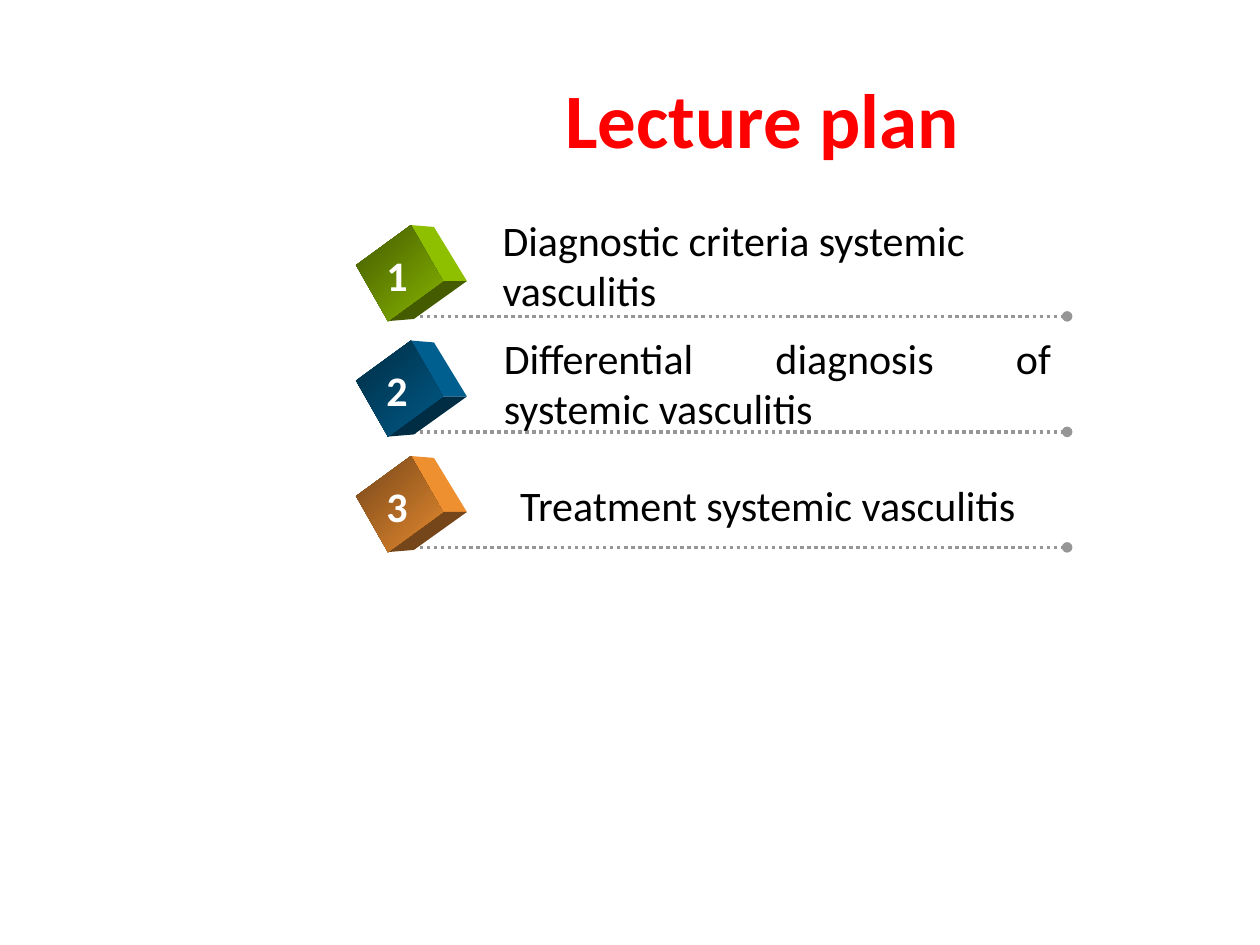
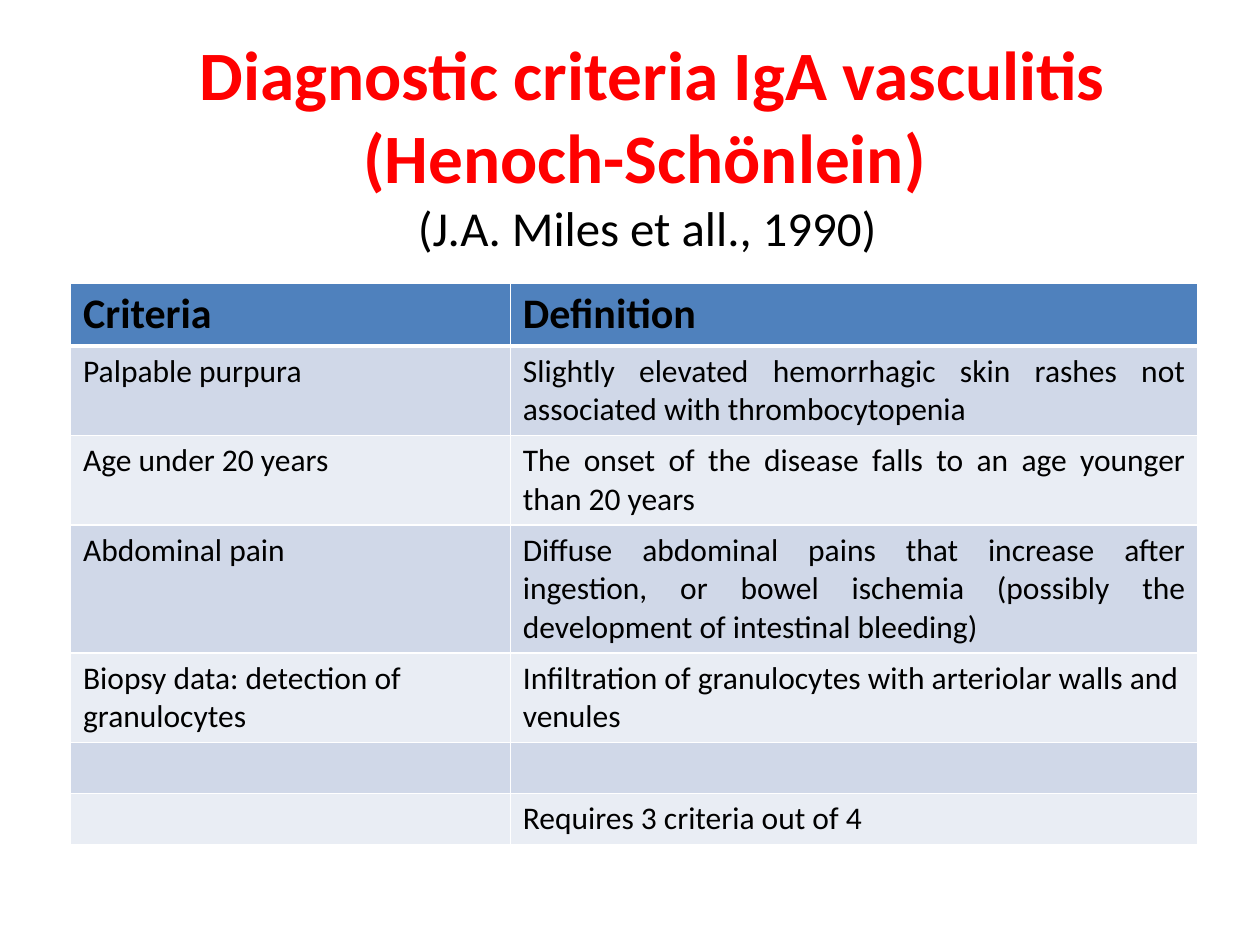
from dataclasses import dataclass

from lxml import etree
from pptx import Presentation
from pptx import util as u
from pptx.dml.color import RGBColor
from pptx.enum import dml, text
from pptx.enum.shapes import MSO_CONNECTOR
from pptx.oxml.ns import qn

Pt = u.Pt
LEFT, MID, FULL = (text.PP_ALIGN.LEFT, text.PP_ALIGN.CENTER,
                   text.PP_ALIGN.JUSTIFY)


@dataclass(frozen=True)
class Theme:
    font: str = "Calibri"
    title: str = "FF0000"
    ink: str = "000000"
    white: str = "FFFFFF"
    rule: str = "969696"
    head: str = "4F81BD"
    bands: tuple = ("D0D8E8", "E9EDF4")
    big: float = 44
    long: float = 39.6
    sub: float = 27.9
    item: float = 24
    body: float = 18


T = Theme()

# front dark, front light, side, base
GREEN = ("445B00", "87B400", "8FC000", "445B00")
BLUE = ("002D44", "005A87", "005F8F", "002D44")
ORANGE = ("75461A", "E58A2E", "EE8F30", "75461A")

PLAN = [
    # label, colours, label offset and size in the row, alignment
    ("Diagnostic criteria systemic vasculitis", GREEN,
     (76.7, -9.8, 341.3, 94.3), LEFT),
    ("Differential diagnosis of systemic vasculitis", BLUE,
     (77.4, -8.1, 326.9, 65.5), FULL),
    ("Treatment systemic vasculitis", ORANGE,
     (86.8, 10.1, 312.5, 36.7), LEFT),
]

CRITERIA = [
    # criterion, definition, alignment, row height
    ("Criteria", "Definition", LEFT, 36),
    ("Palpable purpura",
     "Slightly elevated hemorrhagic skin rashes not associated with "
     "thrombocytopenia", FULL, 51.2),
    ("Age under 20 years",
     "The onset of the disease falls to an age younger than 20 years",
     FULL, 51.2),
    ("Abdominal pain",
     "Diffuse abdominal pains that increase after ingestion, or bowel "
     "ischemia (possibly the development of intestinal bleeding)",
     FULL, 73.1),
    ("Biopsy data: detection of granulocytes",
     "Infiltration of granulocytes with arteriolar walls and venules",
     LEFT, 51.2),
    ("", "", LEFT, 29.2),
    ("", "Requires 3 criteria out of 4", LEFT, 29.2),
]


def rgb(code):
    return RGBColor.from_string(code)


def style(run, size, color, bold=False):
    font = run.font
    font.name, font.size, font.bold = T.font, Pt(size), bold
    font.color.rgb = rgb(color)


def write(slide, box, words, size, color, bold=False, align=LEFT,
          wrap=True, anchor=text.MSO_ANCHOR.TOP):
    """Add a text box; box is left, top, width, height in points."""
    frame = slide.shapes.add_textbox(*map(Pt, box)).text_frame
    frame.word_wrap, frame.vertical_anchor = wrap, anchor
    para = frame.paragraphs[0]
    para.text = words
    para.alignment = align
    for run in para.runs:
        style(run, size, color, bold)
    return para


def title(slide, box, words, size):
    return write(slide, box, words, size, T.title, True, MID,
                 anchor=text.MSO_ANCHOR.MIDDLE)


def face(slide, left, top, points):
    """Add an outline through points, given from the cube's corner."""
    path = [(Pt(left + x), Pt(top + y)) for x, y in points]
    pen = slide.shapes.build_freeform(*path[0])
    pen.add_line_segments(path[1:])
    shape = pen.convert_to_shape()
    shape.shadow.inherit = False
    shape.line.fill.background()
    return shape


def cube(slide, left, top, number, colors):
    west, north, inner, south = (0, 22.9), (31.4, 0), (49.7, 32), (18.3, 54.9)
    back, east, foot = (44.6, 1.1), (63.4, 32), (33.1, 53.7)
    dark, light, side, base = colors
    for points, color in (((north, back, east, inner), side),
                          ((inner, east, foot, south), base)):
        fill = face(slide, left, top, points).fill
        fill.solid()
        fill.fore_color.rgb = rgb(color)
    fill = face(slide, left, top, (west, north, inner, south)).fill
    fill.gradient()
    fill.gradient_angle = 315
    for stop, color in zip(fill.gradient_stops, (dark, light)):
        stop.color.rgb = rgb(color)
    write(slide, (left + 10.4, top + 10.4, 28, 36), str(number),
          T.item, T.white, True, wrap=False)


def rule(slide, left, right, y):
    """Add a dotted line that ends in a dot."""
    link = slide.shapes.add_connector(
        MSO_CONNECTOR.STRAIGHT, Pt(left), Pt(y), Pt(right), Pt(y))
    link.line.color.rgb = rgb(T.rule)
    link.line.width = Pt(2)
    link.line.dash_style = dml.MSO_LINE.ROUND_DOT
    props = link._element.spPr
    etree.SubElement(props.find(qn("a:ln")), qn("a:tailEnd"), type="oval")
    etree.SubElement(props, qn("a:effectLst"))


def plan(slide, left, top, pitch):
    for i, (label, colors, (x, y, wide, high), align) in enumerate(PLAN):
        row = top + i * pitch
        rule(slide, left + 28.4, left + 406.4, row + 52.2)
        cube(slide, left, row, i + 1, colors)
        write(slide, (left + x, row + y, wide, high), label,
              T.item, T.ink, align=align)


def edge(cell, row):
    """Draw white borders, thick below the header."""
    props = cell._tc.get_or_add_tcPr()
    for i, side in enumerate("LRTB"):
        thick = (row, side) in ((0, "B"), (1, "T"))
        line = etree.Element(qn(f"a:ln{side}"), w=str(Pt(3 if thick else 1)))
        fill = etree.SubElement(line, qn("a:solidFill"))
        etree.SubElement(fill, qn("a:srgbClr"), val=T.white)
        props.insert(i, line)


def grid(slide, left, top, widths):
    high = sum(row[-1] for row in CRITERIA)
    table = slide.shapes.add_table(
        len(CRITERIA), len(widths), Pt(left), Pt(top),
        Pt(sum(widths)), Pt(high)).table
    for col, width in zip(table.columns, widths):
        col.width = Pt(width)
    for r, (name, note, align, height) in enumerate(CRITERIA):
        table.rows[r].height = Pt(height)
        head = r == 0
        for c, (words, side) in enumerate(((name, LEFT), (note, align))):
            cell = table.cell(r, c)
            cell.fill.solid()
            cell.fill.fore_color.rgb = rgb(
                T.head if head else T.bands[(r - 1) % 2])
            edge(cell, r)
            para = cell.text_frame.paragraphs[0]
            para.alignment = side
            if words:
                para.text = words
                style(para.runs[0], T.item if head else T.body, T.ink, head)


def lecture(slide):
    title(slide, (198, 25.9, 475.2, 82.8), "Lecture plan", T.big)
    plan(slide, 203.4, 128.6, 66)


def criteria(slide):
    para = title(slide, (90.7, 52.6, 564.5, 59),
                 "Diagnostic criteria IgA vasculitis (Henoch-Schönlein) \v"
                 "(J.A. Miles et all., 1990) ", T.long)
    style(para.runs[-1], T.sub, T.ink)
    grid(slide, 40.3, 161.6, (251.3, 393.1))


def main():
    deck = Presentation()
    deck.slide_width, deck.slide_height = Pt(720), Pt(540)
    for build in (lecture, criteria):
        build(deck.slides.add_slide(deck.slide_layouts[6]))
    deck.save("out.pptx")


if __name__ == "__main__":
    main()
